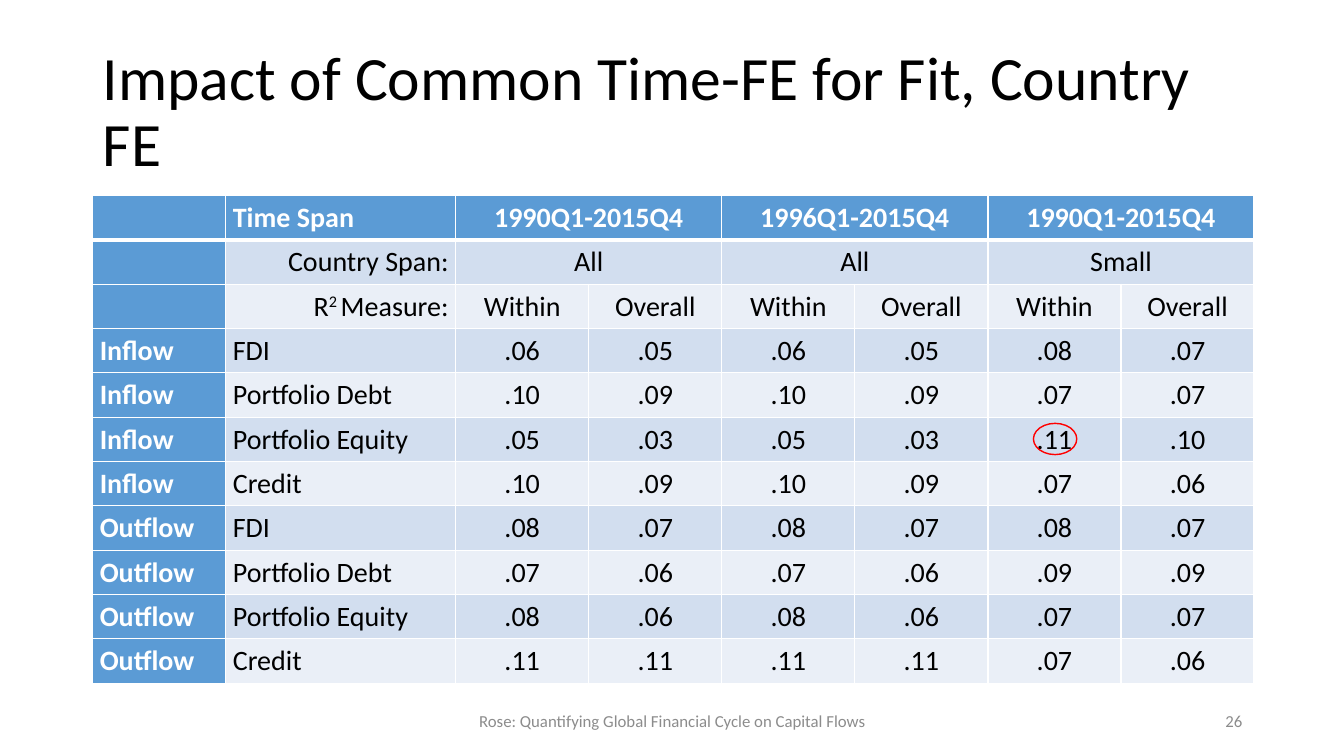
from lxml import etree
from pptx import Presentation
from pptx import util as u
from pptx.dml.color import RGBColor
from pptx.enum import shapes, text
from pptx.oxml.ns import qn

LEFT, MID, RIGHT = text.PP_ALIGN.LEFT, text.PP_ALIGN.CENTER, text.PP_ALIGN.RIGHT
BLUE, BANDS = "5B9BD5", ("EAEFF7", "D2DEEF")
WIDTHS = [1.32, 2.28] + [1.32] * 6
HIGH = 0.44
SPANS = [
    ["", "Time Span", "1990Q1-2015Q4", "", "1996Q1-2015Q4", "", "1990Q1-2015Q4", ""],
    ["", "Country Span:", "All", "", "All", "", "Small", ""],
]
MEASURE = ["", "R^2 ^Measure:"] + ["Within", "Overall"] * 3
FLOWS = [
    ("Inflow", "FDI", ".06 .05 .06 .05 .08 .07"),
    ("Inflow", "Portfolio Debt", ".10 .09 .10 .09 .07 .07"),
    ("Inflow", "Portfolio Equity", ".05 .03 .05 .03 .11 .10"),
    ("Inflow", "Credit", ".10 .09 .10 .09 .07 .06"),
    ("Outflow", "FDI", ".08 .07 .08 .07 .08 .07"),
    ("Outflow", "Portfolio Debt", ".07 .06 .07 .06 .09 .09"),
    ("Outflow", "Portfolio Equity", ".08 .06 .08 .06 .07 .07"),
    ("Outflow", "Credit", ".11 .11 .11 .11 .07 .06"),
]


def apply(item, **form):
    """Set each attribute of an item from a dict of format values."""
    for name, value in form.items():
        setattr(item, name, value)


def paint(color, code):
    """Give a colour format its hex colour."""
    color.rgb = RGBColor.from_string(code)


def box(at):
    """Turn left, top, width and height in inches into lengths."""
    return [u.Inches(n) for n in at]


def write(frame, words, size, code, align=LEFT, bold=False, space=1.0):
    """Write one paragraph; parts between carets are superscript."""
    para = frame.paragraphs[0]
    apply(para, alignment=align, line_spacing=space)
    for i, part in enumerate(words.split("^")):
        run = para.add_run()
        run.text = part
        apply(run.font, name="Calibri", size=u.Pt(size), bold=bold)
        paint(run.font.color, code)
        if i % 2:
            run._r.get_or_add_rPr().set("baseline", "30000")


def edge(cell, head):
    """Draw white cell borders, with a thick one below the header."""
    props = cell._tc.get_or_add_tcPr()
    for side in "LRTB":
        wide = 3 if head and side == "B" else 1
        line = etree.SubElement(props, qn(f"a:ln{side}"), w=str(u.Pt(wide)))
        fill = etree.SubElement(line, qn("a:solidFill"))
        etree.SubElement(fill, qn("a:srgbClr"), val="FFFFFF")


def dress(cell, words, row, col):
    """Format and fill one table cell by its row and column."""
    dark = row == 0 or col == 0
    edge(cell, row == 0)
    cell.fill.solid()
    paint(cell.fill.fore_color, BLUE if dark else BANDS[row % 2])
    apply(cell, margin_left=u.Inches(0.07), margin_right=u.Inches(0.07),
          margin_top=0, margin_bottom=0)
    if words:
        align = MID if col > 1 else RIGHT if col == 1 and row in (1, 2) else LEFT
        write(cell.text_frame, words, 20, "FFFFFF" if dark else "000000",
              align, dark, 1.15)


def add_grid(slide):
    """Add the table of fit values."""
    rows = SPANS + [MEASURE] + [[flow, kind, *nums.split()] for flow, kind, nums in FLOWS]
    at = box((0.92, 1.94, sum(WIDTHS), HIGH * len(rows)))
    grid = slide.shapes.add_table(len(rows), len(WIDTHS), *at).table
    for col, wide in zip(grid.columns, WIDTHS):
        col.width = u.Inches(wide)
    for r, row in enumerate(rows):
        grid.rows[r].height = u.Inches(HIGH)
        for c, words in enumerate(row):
            dress(grid.cell(r, c), words, r, c)
    for r in range(len(SPANS)):
        for c in range(2, len(WIDTHS), 2):
            grid.cell(r, c).merge(grid.cell(r, c + 1))


def add_title(slide, words):
    """Place and format the title."""
    title = slide.shapes.title
    apply(title, **dict(zip(("left", "top", "width", "height"),
                            box((0.92, 0.4, 11.5, 1.45)))))
    apply(title.text_frame, word_wrap=True, auto_size=text.MSO_AUTO_SIZE.NONE,
          vertical_anchor=text.MSO_ANCHOR.MIDDLE)
    write(title.text_frame, words, 44, "000000", space=0.9)


def add_note(slide, words, at, align):
    """Add a grey text at the foot of the slide."""
    frame = slide.shapes.add_textbox(*box(at)).text_frame
    apply(frame, word_wrap=True, vertical_anchor=text.MSO_ANCHOR.MIDDLE)
    write(frame, words, 12, "8C8C8C", align)


def add_ring(slide, at):
    """Circle a value in red."""
    ring = slide.shapes.add_shape(shapes.MSO_SHAPE.OVAL, *box(at))
    ring.shadow.inherit = False
    ring.fill.background()
    ring.line.width = u.Pt(1)
    paint(ring.line.color, "FF0000")


def main():
    """Build the slide and save it."""
    deck = Presentation()
    apply(deck, slide_width=u.Inches(13.33), slide_height=u.Inches(7.5))
    slide = deck.slides.add_slide(deck.slide_layouts[5])
    add_title(slide, "Impact of Common Time-FE for Fit, Country FE")
    add_grid(slide)
    add_note(slide, "Rose: Quantifying Global Financial Cycle on Capital Flows",
             (4.42, 6.95, 4.5, 0.4), MID)
    add_note(slide, "26", (9.42, 6.95, 3, 0.4), RIGHT)
    add_ring(slide, (10.25, 4.2, 0.43, 0.31))
    deck.save("out.pptx")


if __name__ == "__main__":
    main()
